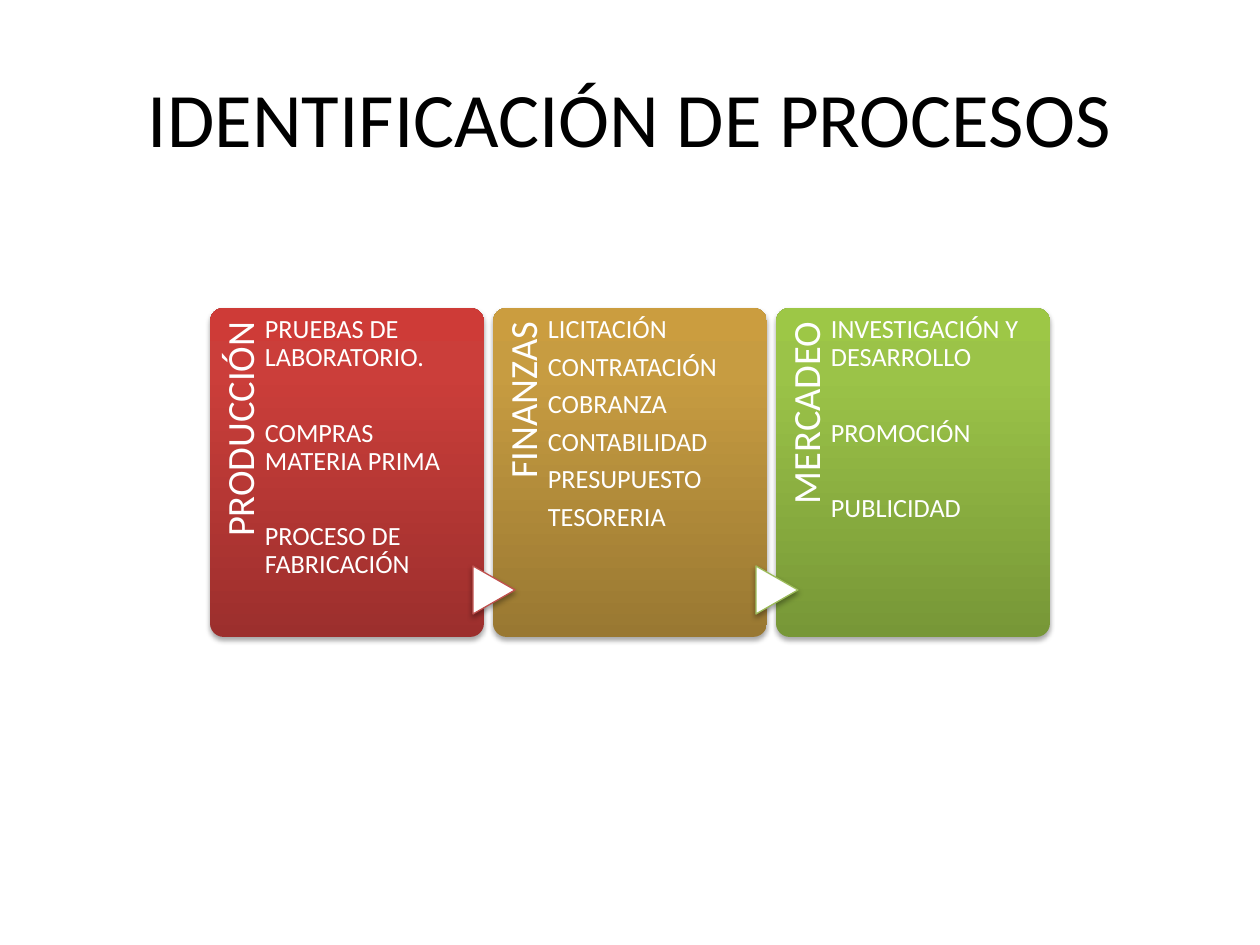
from copy import deepcopy

from lxml.etree import SubElement
from pptx import Presentation
from pptx.dml.color import RGBColor
from pptx.enum.shapes import MSO_SHAPE as Shape
from pptx.enum.text import MSO_ANCHOR as Anchor, PP_ALIGN as Align
from pptx.oxml.ns import qn
from pptx.util import Emu, Pt

# Content: heading, items, space after each item (pt), gradient, arrow outline
TITLE = "IDENTIFICACIÓN DE PROCESOS"
TIGHT, LOOSE = 5.25, 26.7
RED, GREEN = RGBColor(0xC0, 0x50, 0x4D), RGBColor(0x9B, 0xBB, 0x59)
WHITE, BLACK = RGBColor(255, 255, 255), RGBColor(0, 0, 0)
PROCESSES = [
    ("PRODUCCIÓN",
     ["PRUEBAS DE LABORATORIO.", "COMPRAS MATERIA PRIMA", "PROCESO DE FABRICACIÓN"],
     LOOSE, ("9C2F2D", "CB3E3A", "CE3B37"), None),
    ("FINANZAS",
     ["LICITACIÓN", "CONTRATACIÓN", "COBRANZA", "CONTABILIDAD", "PRESUPUESTO", "TESORERIA"],
     TIGHT, ("997832", "C79C41", "CB9D3F"), RED),
    ("MERCADEO",
     ["INVESTIGACIÓN Y DESARROLLO", "PROMOCIÓN", "PUBLICIDAD"],
     LOOSE, ("779737", "9BC348", "9DC746"), GREEN),
]
STOPS = (0, 0.8, 1)

# Geometry in px
PX = 914400 // 126
FONT = "Calibri"
CARD_LEFT, CARD_TOP, CARD_WIDTH, CARD_HEIGHT, PITCH = 210, 308, 274, 329, 283
LABEL_LENGTH, LABEL_THICKNESS, LABEL_TOP = 270, 54, 308
ITEMS_OFFSET, ITEMS_WIDTH = 55, 204
ARROW_WIDTH, ARROW_HEIGHT, ARROW_MIDDLE = 48, 42, 590


def box(*lengths):
    return [Emu(length * PX) for length in lengths]


def turned_box(center_x, center_y, width, height):
    return box(center_x - width // 2, center_y - height // 2, width, height)


def add_shadow(shape):
    shape.shadow.inherit = False
    effects = shape._element.spPr.find(qn("a:effectLst"))
    shadow = SubElement(effects, qn("a:outerShdw"), blurRad="40000", dist="23000",
                        dir="5400000", rotWithShape="0")
    color = SubElement(shadow, qn("a:srgbClr"), val="000000")
    SubElement(color, qn("a:alpha"), val="35000")


def fill_gradient(shape, colors):
    fill = shape.fill
    fill.gradient()
    fill.gradient_angle = 90
    stop_list = shape._element.spPr.find(".//" + qn("a:gsLst"))
    stop_list.append(deepcopy(stop_list[-1]))
    for stop, position, color in zip(fill.gradient_stops, STOPS, colors):
        stop.position = position
        stop.color.rgb = RGBColor.from_string(color)


def add_text(slide, place, lines, size, space, insets, align=Align.LEFT):
    text_box = slide.shapes.add_textbox(*place)
    frame = text_box.text_frame
    frame.word_wrap = True
    frame.vertical_anchor = Anchor.TOP
    (frame.margin_left, frame.margin_top,
     frame.margin_right, frame.margin_bottom) = box(*insets)
    frame.text = "\n".join(lines)
    for paragraph in frame.paragraphs:
        paragraph.alignment = align
        paragraph.line_spacing = 0.9
        paragraph.space_after = Pt(space)
        paragraph.font.name, paragraph.font.size = FONT, Pt(size)
        paragraph.font.color.rgb = WHITE
    return text_box


def add_card(slide, left, heading, items, space, colors):
    card = slide.shapes.add_shape(
        Shape.ROUNDED_RECTANGLE, *box(left, CARD_TOP, CARD_WIDTH, CARD_HEIGHT))
    card.adjustments[0] = 0.05
    fill_gradient(card, colors)
    card.line.fill.background()
    add_shadow(card)

    # Heading reads upwards along the left edge
    place = turned_box(left + 1 + LABEL_THICKNESS // 2, LABEL_TOP + LABEL_LENGTH // 2,
                       LABEL_LENGTH, LABEL_THICKNESS)
    label = add_text(slide, place, [heading], 22, 0, (0, 10, 14, 0), Align.RIGHT)
    label.rotation = 270

    place = box(left + ITEMS_OFFSET, CARD_TOP, ITEMS_WIDTH, CARD_HEIGHT)
    add_text(slide, place, items, 15, space, (0, 8, 0, 0))


def add_arrow(slide, left, color):
    arrow = slide.shapes.add_shape(
        Shape.FLOWCHART_EXTRACT,
        *turned_box(left + 1, ARROW_MIDDLE, ARROW_WIDTH, ARROW_HEIGHT))
    arrow.rotation = 90
    arrow.fill.solid()
    arrow.fill.fore_color.rgb = WHITE
    arrow.line.color.rgb = color
    arrow.line.width = Pt(0.75)
    add_shadow(arrow)


def main():
    presentation = Presentation()
    presentation.slide_width, presentation.slide_height = box(1260, 945)
    slide = presentation.slides.add_slide(presentation.slide_layouts[5])

    # Title
    title = slide.shapes.title
    title.left, title.top, title.width, title.height = box(63, 38, 1134, 157)
    title.text_frame.text = TITLE
    title.text_frame.vertical_anchor = Anchor.MIDDLE
    paragraph = title.text_frame.paragraphs[0]
    paragraph.alignment = Align.CENTER
    paragraph.font.name, paragraph.font.size = FONT, Pt(44)
    paragraph.font.color.rgb = BLACK

    # Process cards, each after the first entered by an arrow
    for index, (heading, items, space, colors, arrow_color) in enumerate(PROCESSES):
        left = CARD_LEFT + index * PITCH
        add_card(slide, left, heading, items, space, colors)
        if arrow_color is not None:
            add_arrow(slide, left, arrow_color)

    presentation.save("out.pptx")


if __name__ == "__main__":
    main()
